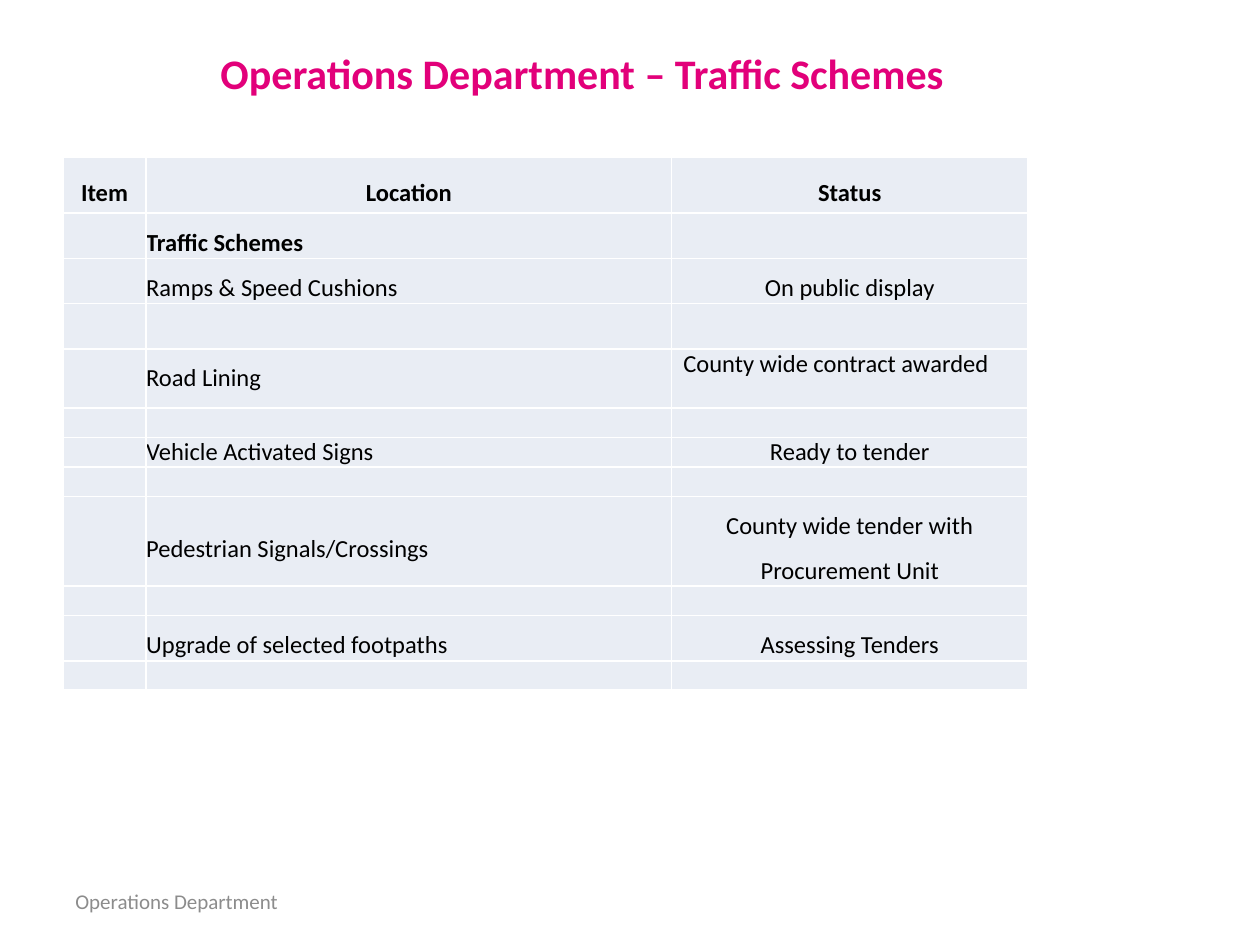
from lxml import etree
from pptx import Presentation
from pptx.dml.color import RGBColor
from pptx.enum.text import MSO_ANCHOR, PP_ALIGN
from pptx.oxml.ns import qn
from pptx.util import Inches, Pt

LEFT, CENTER = PP_ALIGN.LEFT, PP_ALIGN.CENTER
TOP, MIDDLE = MSO_ANCHOR.TOP, MSO_ANCHOR.MIDDLE
PINK = RGBColor(0xE2, 0x00, 0x7A)
GRAY = RGBColor(0x8C, 0x8C, 0x8C)
BLACK = RGBColor(0x00, 0x00, 0x00)
WHITE = RGBColor(0xFF, 0xFF, 0xFF)
PALE = RGBColor(0xE9, 0xED, 0xF4)
TITLE_ONLY = 5

COLUMNS = [0.66, 4.17, 2.83]
ROWS = [
    (0.44, 1.5, ["Item", "Location", "Status"]),
    (0.36, 1.5, ["", "Traffic Schemes", ""]),
    (0.36, 1.5, ["", "Ramps & Speed Cushions", "On public display"]),
    (0.36, 1.5, ["", "", ""]),
    (0.47, 1, ["", "Road Lining", "County wide contract awarded"]),
    (0.23, 1, ["", "", ""]),
    (0.23, 1, ["", "Vehicle Activated Signs", "Ready to tender"]),
    (0.23, 1, ["", "", ""]),
    (0.71, 1.5, ["", "Pedestrian Signals/Crossings",
                 "County wide tender with Procurement Unit"]),
    (0.23, 1, ["", "", ""]),
    (0.36, 1.5, ["", "Upgrade of selected footpaths", "Assessing Tenders"]),
    (0.23, 1, ["", "", ""]),
]


class SlideBuilder:
    """Holds the text style and the slide being filled."""

    def __init__(self, slide, font="Calibri"):
        self.slide = slide
        self.font = font

    def set_text(self, tf, text, size, color, bold=False, align=LEFT, spacing=1):
        tf.text = text
        p = tf.paragraphs[0]
        p.alignment = align
        p.line_spacing = float(spacing)
        p._p.get_or_add_endParaRPr().set("sz", str(size * 100))
        for r in p.runs:
            r.font.name = self.font
            r.font.size = Pt(size)
            r.font.bold = bold
            r.font.color.rgb = color

    def title(self, text, left, top, width, height):
        sp = self.slide.shapes.title
        sp.left, sp.top = Inches(left), Inches(top)
        sp.width, sp.height = Inches(width), Inches(height)
        sp.text_frame.vertical_anchor = TOP
        self.set_text(sp.text_frame, text, 24, PINK, True, CENTER)

    def text(self, text, left, top, width, height):
        sp = self.slide.shapes.add_textbox(
            Inches(left), Inches(top), Inches(width), Inches(height))
        tf = sp.text_frame
        tf.word_wrap = True
        tf.vertical_anchor = MIDDLE
        self.set_text(tf, text, 12, GRAY)

    def borders(self, cell):
        tc_pr = cell._tc.get_or_add_tcPr()
        for i, side in enumerate(("a:lnL", "a:lnR", "a:lnT", "a:lnB")):
            ln = etree.Element(qn(side), w=str(Pt(1)))
            fill = etree.SubElement(ln, qn("a:solidFill"))
            etree.SubElement(fill, qn("a:srgbClr"), val=str(WHITE))
            tc_pr.insert(i, ln)

    def table(self, left, top, columns, rows):
        height = sum(row[0] for row in rows)
        frame = self.slide.shapes.add_table(
            len(rows), len(columns), Inches(left), Inches(top),
            Inches(sum(columns)), Inches(height))
        table = frame.table
        table.first_row = table.horz_banding = False
        for column, width in zip(table.columns, columns):
            column.width = Inches(width)
        for i, (row_height, spacing, texts) in enumerate(rows):
            table.rows[i].height = Inches(row_height)
            for j, text in enumerate(texts):
                cell = table.cell(i, j)
                cell.margin_left = cell.margin_right = 0
                cell.margin_top = cell.margin_bottom = 0
                cell.vertical_anchor = MIDDLE
                cell.fill.solid()
                cell.fill.fore_color.rgb = PALE
                self.borders(cell)
                align = LEFT if i and j == 1 else CENTER
                self.set_text(cell.text_frame, text, 14, BLACK, i < 2, align, spacing)
        return table


def main():
    prs = Presentation()
    prs.slide_width, prs.slide_height = Inches(10), Inches(7.5)
    s = SlideBuilder(prs.slides.add_slide(prs.slide_layouts[TITLE_ONLY]))
    s.text("Operations Department", 0.5, 6.95, 2.83, 0.4)
    table = s.table(0.5, 1.25, COLUMNS, ROWS)
    road_status = table.cell(4, 2)
    road_status.vertical_anchor = TOP
    road_status.margin_right = Inches(0.22)
    s.title("Operations Department – Traffic Schemes", 0.58, 0.33, 8.08, 0.5)
    prs.save("out.pptx")


if __name__ == "__main__":
    main()
